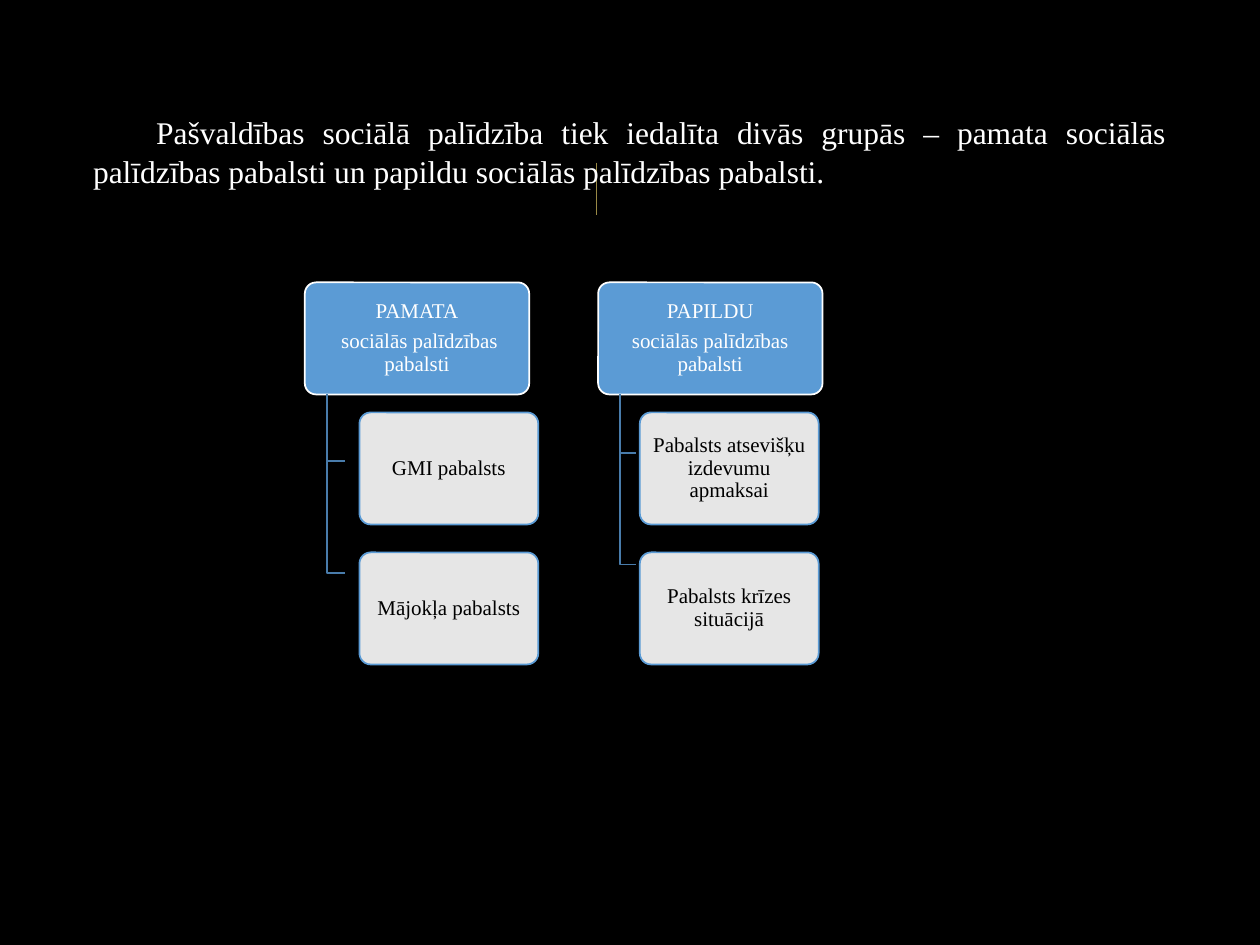
from lxml import etree
from pptx import Presentation
from pptx.dml.color import RGBColor
from pptx.enum.shapes import MSO_CONNECTOR, MSO_SHAPE
from pptx.enum.text import MSO_ANCHOR, PP_ALIGN
from pptx.oxml.ns import qn
from pptx.util import Pt

BLACK = RGBColor(0x00, 0x00, 0x00)
WHITE = RGBColor(0xFF, 0xFF, 0xFF)
BLUE = RGBColor(0x5B, 0x9B, 0xD5)
BRANCH_BLUE = RGBColor(0x49, 0x7C, 0xAB)
GOLD = RGBColor(0x99, 0x89, 0x46)

ROUNDED = MSO_SHAPE.ROUNDED_RECTANGLE
STRAIGHT = MSO_CONNECTOR.STRAIGHT
MIDDLE = MSO_ANCHOR.MIDDLE
CENTER, JUSTIFY = PP_ALIGN.CENTER, PP_ALIGN.JUSTIFY

FONT = "Times New Roman"
CARD_H = 64
HEADER_W, BENEFIT_W = 128.2, 102.2
BENEFIT_TOP, BENEFIT_PITCH = 74.3, 80
TRUNK_INSET = 12.6

INTRO = ("Pašvaldības sociālā palīdzība tiek iedalīta divās grupās – pamata "
         "sociālās palīdzības pabalsti un papildu sociālās palīdzības pabalsti.")

# left, header lines, benefits, benefit indent, branch length, branch drops
GROUPS = [
    (174.2, ["PAMATA", " sociālās palīdzības pabalsti"],
     ["GMI pabalsts", "Mājokļa pabalsts"], 31.2, 10.6, [38.2, 102]),
    (341.8, ["PAPILDU", "sociālās palīdzības pabalsti"],
     ["Pabalsts atsevišķu izdevumu apmaksai", "Pabalsts krīzes situācijā"],
     23.8, 9, [33.6, 97.2]),
]
GROUPS_TOP = 161.4


def style_paragraph(paragraph, size, color, align, spacing, after):
    paragraph.font.name = FONT
    paragraph.font.size = Pt(size)
    paragraph.font.color.rgb = color
    paragraph.alignment = align
    paragraph.line_spacing = spacing
    paragraph.space_after = Pt(after)


def add_divider(slide, x, top, height):
    divider = slide.shapes.add_connector(
        STRAIGHT, Pt(x), Pt(top), Pt(x), Pt(top + height))
    divider.line.color.rgb = GOLD
    divider.line.width = Pt(0.75)
    etree.SubElement(divider._element.spPr, qn("a:effectLst"))


def add_intro(slide, left, top, width, height):
    intro = slide.shapes.add_textbox(Pt(left), Pt(top), Pt(width), Pt(height))
    intro.text_frame.word_wrap = True
    paragraph = intro.text_frame.paragraphs[0]
    paragraph.text = INTRO
    style_paragraph(paragraph, 18, WHITE, JUSTIFY, 1.05, 8)
    paragraph._p.get_or_add_pPr().set("indent", str(Pt(36)))


def add_card(slide, left, top, width, lines, fill, outline, text_color):
    card = slide.shapes.add_shape(
        ROUNDED, Pt(left), Pt(top), Pt(width), Pt(CARD_H))
    card.shadow.inherit = False
    card.adjustments[0] = 0.1
    card.fill.solid()
    card.fill.fore_color.rgb = fill
    card.line.color.rgb = outline
    card.line.width = Pt(1)
    frame = card.text_frame
    frame.word_wrap = True
    frame.vertical_anchor = MIDDLE
    frame.margin_left = frame.margin_right = Pt(2.4)
    frame.margin_top = frame.margin_bottom = Pt(1.6)
    frame.text = "\n".join(lines)
    for paragraph in frame.paragraphs:
        style_paragraph(paragraph, 12, text_color, CENTER, 0.9, 4.2)
    return card


def add_branch(slide, x, top, length, drop):
    builder = slide.shapes.build_freeform(Pt(x), Pt(top))
    builder.add_line_segments(
        [(Pt(x), Pt(top + drop)), (Pt(x + length), Pt(top + drop))],
        close=False)
    branch = builder.convert_to_shape()
    branch.shadow.inherit = False
    branch.fill.background()
    branch.line.color.rgb = BRANCH_BLUE
    branch.line.width = Pt(1)


def add_group(slide, left, top, header, benefits, indent, length, drops):
    # Group heading
    add_card(slide, left, top, HEADER_W, header, BLUE, WHITE, WHITE)
    # Benefits, each with the branch that leads to it
    for row, (benefit, drop) in enumerate(zip(benefits, drops)):
        add_branch(slide, left + TRUNK_INSET, top + CARD_H, length, drop)
        card = add_card(slide, left + indent,
                        top + BENEFIT_TOP + row * BENEFIT_PITCH,
                        BENEFIT_W, [benefit], WHITE, BLUE, BLACK)
        color = card._element.spPr.find(qn("a:solidFill"))[0]
        etree.SubElement(color, qn("a:alpha"), val="90000")


def main():
    prs = Presentation()
    prs.slide_width, prs.slide_height = Pt(720), Pt(540)
    slide = prs.slides.add_slide(prs.slide_layouts[6])
    slide.background.fill.solid()
    slide.background.fill.fore_color.rgb = BLACK

    add_divider(slide, 340.8, 93, 30)
    add_intro(slide, 46.1, 59.8, 627.8, 51.8)
    for left, *content in GROUPS:
        add_group(slide, left, GROUPS_TOP, *content)
    prs.save("out.pptx")


if __name__ == "__main__":
    main()
